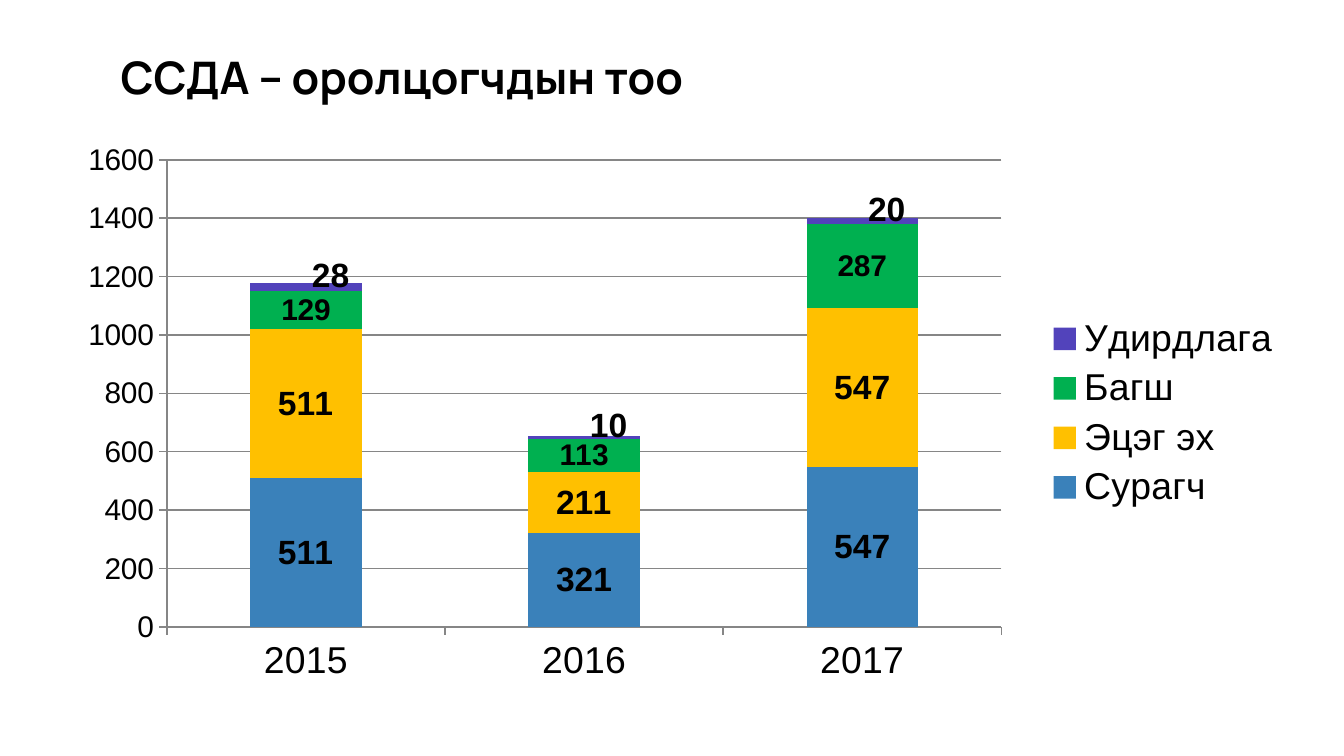
from dataclasses import dataclass

from lxml.etree import SubElement
from pptx import Presentation
from pptx.chart.chart import Chart
from pptx.chart.data import CategoryChartData
from pptx.chart.series import BarSeries
from pptx.dml.color import RGBColor
from pptx.enum.chart import XL_CHART_TYPE, XL_LEGEND_POSITION, XL_TICK_MARK
from pptx.oxml import parse_xml
from pptx.oxml.ns import nsdecls, qn
from pptx.slide import Slide
from pptx.text.text import Font
from pptx.util import Cm, Pt

BLACK = RGBColor(0x00, 0x00, 0x00)
GRAY = RGBColor(0x86, 0x86, 0x86)
BLUE = RGBColor(0x3A, 0x81, 0xBA)
YELLOW = RGBColor(0xFF, 0xC0, 0x00)
GREEN = RGBColor(0x00, 0xB0, 0x50)
VIOLET = RGBColor(0x52, 0x43, 0xBB)


@dataclass(frozen=True)
class ParticipantGroup:
    name: str
    counts: tuple[int, ...]
    color: RGBColor
    label_size: int = 18
    label_shift: tuple[float, float] | None = None


YEARS = ("2015", "2016", "2017")
GROUPS = (
    ParticipantGroup("Сурагч", (511, 321, 547), BLUE),
    ParticipantGroup("Эцэг эх", (511, 211, 547), YELLOW),
    ParticipantGroup("Багш", (129, 113, 287), GREEN, label_size=16),
    ParticipantGroup("Удирдлага", (28, 10, 20), VIOLET, label_shift=(0.02, -0.02)),
)


def style_font(font: Font, size: int, bold: bool = False, face: str = "Arial") -> None:
    font.name = face
    font.size = Pt(size)
    font.bold = bold
    font.color.rgb = BLACK


def add_title(slide: Slide, title: str) -> None:
    heading = slide.shapes.add_textbox(Cm(2.03), Cm(0.69), Cm(20.47), Cm(2.39))
    frame = heading.text_frame
    frame.word_wrap = True
    frame.margin_left = frame.margin_right = Cm(0.25)
    frame.margin_top = frame.margin_bottom = Cm(0.25)
    run = frame.paragraphs[0].add_run()
    run.text = title
    style_font(run.font, 24, bold=True, face="Manrope")


def place_plot(chart: Chart, x: float, y: float, w: float, h: float) -> None:
    plot_area = chart._chartSpace.chart.plotArea
    for old_layout in plot_area.findall(qn("c:layout")):
        plot_area.remove(old_layout)
    layout = parse_xml(f"<c:layout {nsdecls('c')}/>")
    manual = SubElement(layout, qn("c:manualLayout"))
    settings = {"layoutTarget": "inner", "xMode": "edge", "yMode": "edge",
                "x": x, "y": y, "w": w, "h": h}
    for tag, setting in settings.items():
        SubElement(manual, qn(f"c:{tag}")).set("val", str(setting))
    plot_area.insert(0, layout)


def shift_labels(series: BarSeries, group: ParticipantGroup) -> None:
    for index in range(len(group.counts)):
        style_font(series.points[index].data_label.font, group.label_size, bold=True)
    for label in series._element.iter(qn("c:dLbl")):
        layout = parse_xml(f"<c:layout {nsdecls('c')}/>")
        manual = SubElement(layout, qn("c:manualLayout"))
        for tag, offset in zip("xy", group.label_shift):
            SubElement(manual, qn(f"c:{tag}")).set("val", str(offset))
        label.insert(1, layout)


def style_group(series: BarSeries, group: ParticipantGroup) -> None:
    series.format.fill.solid()
    series.format.fill.fore_color.rgb = group.color
    series.invert_if_negative = False
    series.data_labels.show_value = True
    style_font(series.data_labels.font, group.label_size, bold=True)
    if group.label_shift:
        shift_labels(series, group)


def add_participant_chart(slide: Slide) -> None:
    counts = CategoryChartData()
    counts.categories = YEARS
    for group in GROUPS:
        counts.add_series(group.name, group.counts)
    chart = slide.shapes.add_chart(
        XL_CHART_TYPE.COLUMN_STACKED, Cm(1.3), Cm(2.49), Cm(23.19), Cm(10.64), counts
    ).chart
    style_font(chart.font, 10)
    chart.has_title = False
    chart.has_legend = True
    chart.legend.position = XL_LEGEND_POSITION.RIGHT
    chart.legend.include_in_layout = False
    style_font(chart.legend.font, 20)

    plot = chart.plots[0]
    plot.gap_width = 150
    plot.overlap = 100
    plot.vary_by_categories = False
    for series, group in zip(plot.series, GROUPS):
        style_group(series, group)

    for axis, size in ((chart.category_axis, 20), (chart.value_axis, 16)):
        axis.major_tick_mark = XL_TICK_MARK.OUTSIDE
        axis.minor_tick_mark = XL_TICK_MARK.NONE
        axis.format.line.color.rgb = GRAY
        style_font(axis.tick_labels.font, size)
    counts_axis = chart.value_axis
    counts_axis.minimum_scale = 0
    counts_axis.maximum_scale = 1600
    counts_axis.major_unit = 200
    counts_axis.major_gridlines.format.line.color.rgb = GRAY
    place_plot(chart, 0.08, 0.05, 0.68, 0.83)


def main() -> None:
    presentation = Presentation()
    presentation.slide_width = Cm(25.4)
    presentation.slide_height = Cm(14.29)
    slide = presentation.slides.add_slide(presentation.slide_layouts[6])
    add_participant_chart(slide)
    add_title(slide, "ССДА – оролцогчдын тоо")
    presentation.save("out.pptx")


if __name__ == "__main__":
    main()
